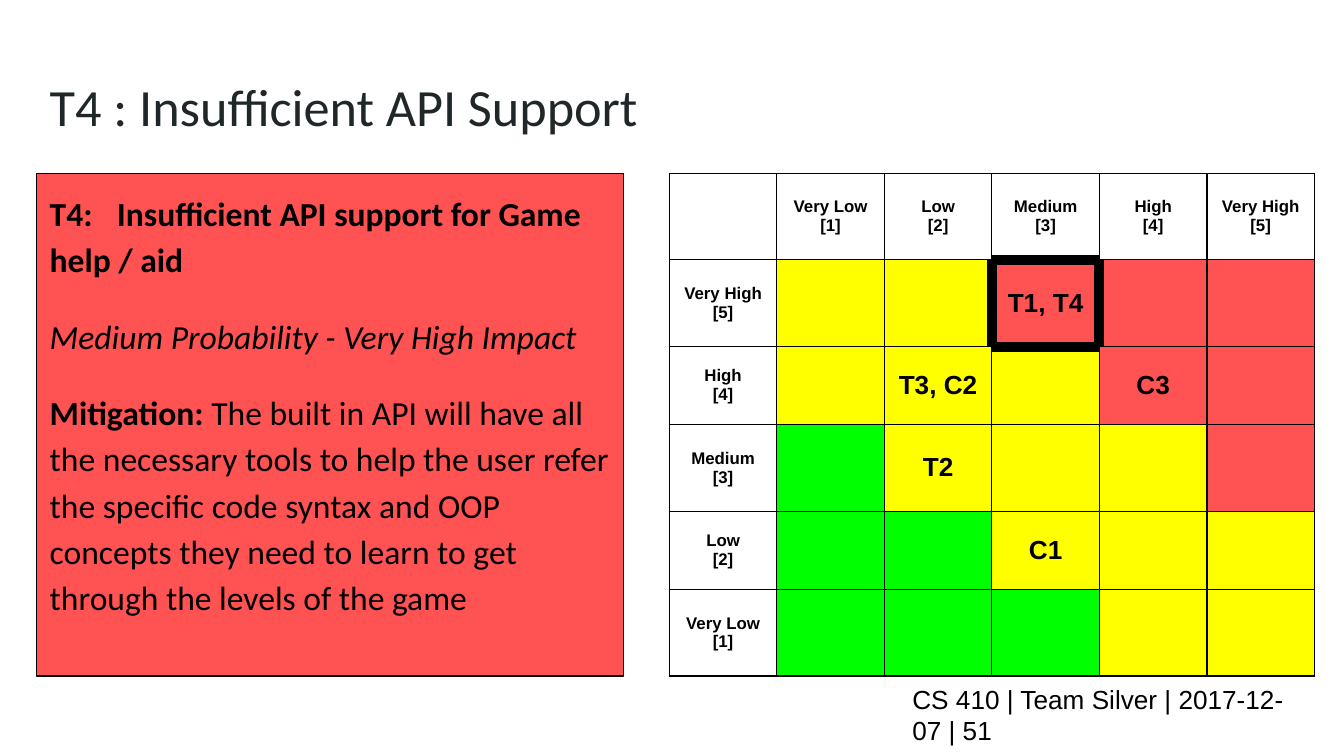
import pptx
import pptx.util
import pptx.dml.color
import pptx.enum.text
import pptx.oxml
import pptx.oxml.ns

Pt = pptx.util.Pt
Anchor = pptx.enum.text.MSO_ANCHOR
Align = pptx.enum.text.PP_ALIGN
space = pptx.oxml.ns.nsdecls("a")


def tint(code):
    return pptx.dml.color.RGBColor.from_string(code)


def write(frame, paras, font, para, code="000000"):
    """Fill a text frame; each paragraph is a list of (text, extra font values)."""
    for n, runs in enumerate(paras):
        p = frame.paragraphs[0] if n == 0 else frame.add_paragraph()
        for key, val in para.items():
            setattr(p, key, val)
        for text, extra in runs:
            run = p.add_run()
            run.text = text
            run.font.color.rgb = tint(code)
            for key, val in {**font, **extra}.items():
                setattr(run.font, key, val)


# Slide, 16 to 9
deck = pptx.Presentation()
deck.slide_width = pptx.util.Inches(10)
deck.slide_height = deck.slide_width * 9 // 16
wide, high = deck.slide_width / 100, deck.slide_height / 100  # one percent
slide = deck.slides.add_slide(deck.slide_layouts[1])
title, body = slide.shapes.title, slide.placeholders[1]
foot = slide.shapes.add_textbox(0, 0, 0, 0)

# Places, in percent of the slide
inset = pptx.util.Inches(0.1)
pad = dict.fromkeys(
    ("margin_left", "margin_top", "margin_right", "margin_bottom"), inset)
for shape, x, y, w, h, anchor in (
        (title, 2.7, 8, 93.2, 11.2, Anchor.TOP),
        (body, 2.7, 22.95, 43.7, 66.5, Anchor.TOP),
        (foot, 66.9, 90.7, 31.6, 7.65, Anchor.MIDDLE)):
    shape.left, shape.top = int(x * wide), int(y * high)
    shape.width, shape.height = int(w * wide), int(h * high)
    look = {**pad, "word_wrap": True, "vertical_anchor": anchor,
            "auto_size": pptx.enum.text.MSO_AUTO_SIZE.NONE}
    for key, val in look.items():
        setattr(shape.text_frame, key, val)

# Title and footer
left = {"alignment": Align.LEFT}
write(title.text_frame, [[("T4 : Insufficient API Support", {})]],
      {"name": "Calibri", "size": Pt(28)}, left, "202729")
write(foot.text_frame, [[("CS 410 | Team Silver | 2017-12-07 | 51", {})]],
      {"name": "Arial", "size": Pt(14)}, left)

# Risk panel
body.fill.solid()
body.fill.fore_color.rgb = tint("FF5252")
body.line.color.rgb = tint("000000")
body.line.width = Pt(0.75)
bold = {"bold": True}
write(body.text_frame, [
    [("T4:\tInsufficient API support for Game help / aid", bold)],
    [("Medium Probability - Very High Impact", {"italic": True})],
    [("Mitigation: ", bold),
     ("The built in API will have all the necessary tools to help the user "
      "refer the specific code syntax and OOP concepts they need to learn "
      "to get through the levels of the game", {})],
], {"name": "Calibri", "size": Pt(18)},
    {**left, "line_spacing": 1.15, "space_before": Pt(0), "space_after": Pt(16)})
for p in body.text_frame.paragraphs:
    props = p._p.get_or_add_pPr()
    props.set("marL", "0")
    props.set("indent", "0")
    for xml in (f"<a:buNone {space}/>",
                f'<a:tabLst {space}><a:tab pos="{pptx.util.Inches(1)}" '
                f'algn="l"/></a:tabLst>'):
        props.append(pptx.oxml.parse_xml(xml))

# Risk matrix
rows = (11.4, 11.5, 10.3, 11.5, 10.3, 11.5)
size = len(rows)
grid = slide.shapes.add_table(
    size, size, int(49.8 * wide), int(22.95 * high),
    int(8 * size * wide), int(sum(rows) * high)).table
grid.first_row = grid.horz_banding = False
for col in grid.columns:
    col.width = int(8 * wide)
for row, part in zip(grid.rows, rows):
    row.height = int(part * high)

levels = ("Very Low", "Low", "Medium", "High", "Very High")
risks = {(1, 3): "T1, T4", (2, 2): "T3, C2", (2, 4): "C3",
         (3, 2): "T2", (4, 3): "C1"}
hot = (1, 3)
fills = {"G": "00FF00", "Y": "FFFF00", "R": "FF5252"}
scale = "GGGYYYRRR"  # each row up starts one step further along
sides = {"lnL": (0, -1), "lnR": (0, 1), "lnT": (-1, 0), "lnB": (1, 0)}

for r in range(size):
    for c in range(size):
        cell = grid.cell(r, c)
        # Borders, heavy around the hot cell
        for tag, (down, over) in sides.items():
            heavy = hot in ((r, c), (r + down, c + over))
            cell._tc.get_or_add_tcPr().append(pptx.oxml.parse_xml(
                f'<a:{tag} {space} w="{Pt(6 if heavy else 0.75)}"><a:solidFill>'
                f'<a:srgbClr val="000000"/></a:solidFill></a:{tag}>'))
        for key, val in {**pad, "vertical_anchor": Anchor.MIDDLE}.items():
            setattr(cell, key, val)
        # Fill and wording
        if r and c:
            cell.fill.solid()
            cell.fill.fore_color.rgb = tint(fills[scale[size - 1 - r + c - 1]])
            lines, points = [risks.get((r, c))], 14
        else:
            cell.fill.background()
            rank = c if r == 0 else size - r
            lines = [levels[rank - 1], f"[{rank}]"] if r or c else [None]
            points = 9
        if lines[0]:
            write(cell.text_frame, [[(line, {})] for line in lines],
                  {"name": "Arial", "size": Pt(points), "bold": True},
                  {"alignment": Align.CENTER})

deck.save("out.pptx")
